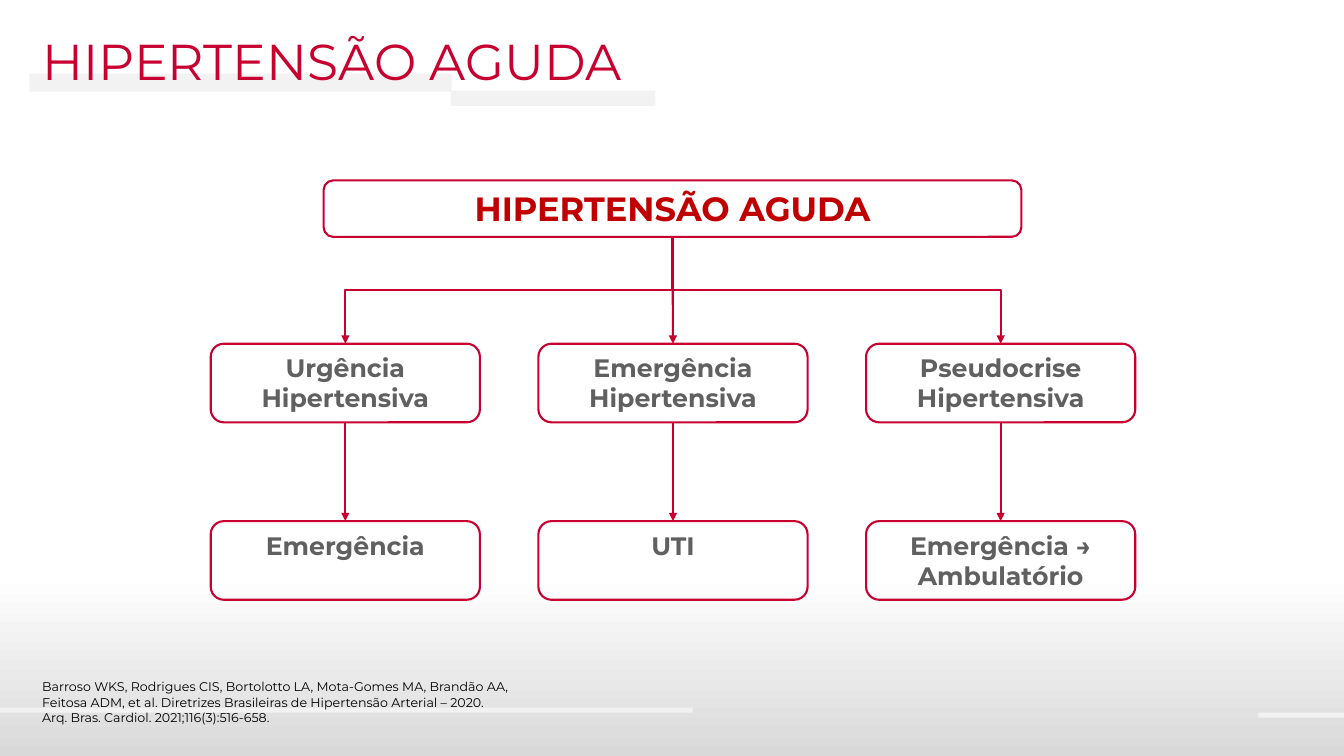
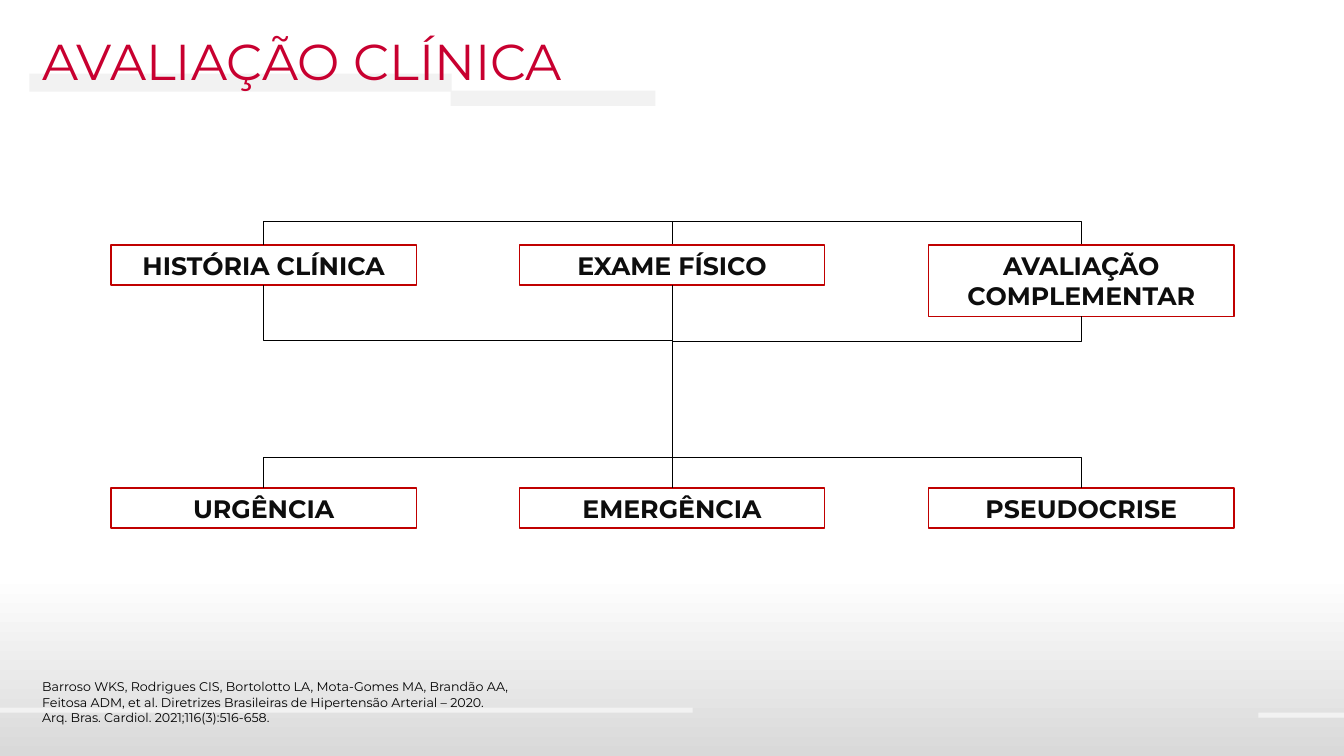
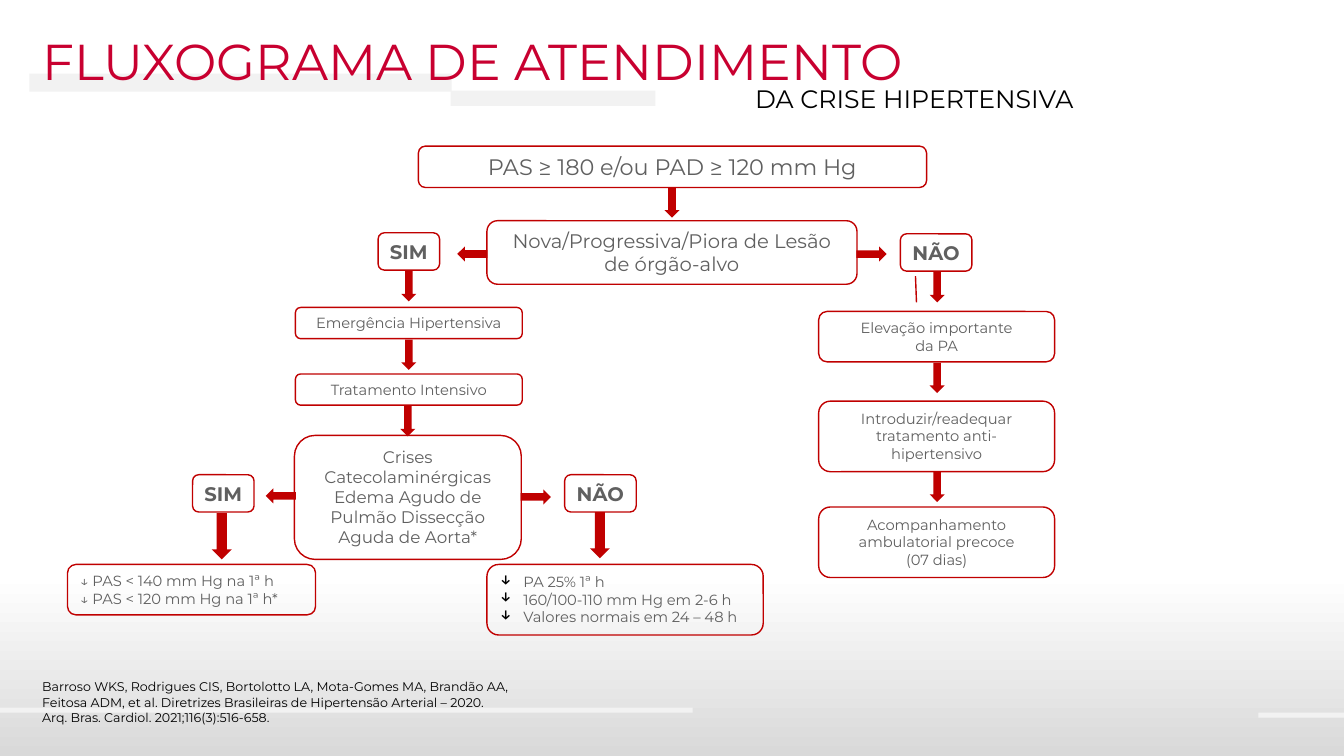
import lxml.etree
import pptx
import pptx.dml.color
import pptx.enum.shapes
import pptx.enum.text
import pptx.oxml.ns
import pptx.util

SHAPE = pptx.enum.shapes.MSO_SHAPE
CONNECTOR = pptx.enum.shapes.MSO_CONNECTOR
ALIGN = pptx.enum.text.PP_ALIGN
ANCHOR = pptx.enum.text.MSO_ANCHOR
qn = pptx.oxml.ns.qn

# Shared look
FONT = "Montserrat"
CRIMSON, RED = "C80030", "C00000"
GRAY, INK, BLACK = "606060", "0D0D0D", "000000"
BAND, WHITE, SHADE = "F2F2F2", "FFFFFF", "D9D9D9"
WIDTH, HEIGHT = 1333, 750
TOP, BOTTOM = 0, 2  # connection sites of a box
REFERENCE = (
    "Barroso WKS, Rodrigues CIS, Bortolotto LA, Mota-Gomes MA, Brandão AA,\n"
    "Feitosa ADM, et al. Diretrizes Brasileiras de Hipertensão Arterial – 2020.\n"
    "Arq. Bras. Cardiol. 2021;116(3):516-658."
)


def px(n):
    """100 px to the inch."""
    return pptx.util.Emu(round(n * 9144))


def rgb(color):
    return pptx.dml.color.RGBColor.from_string(color)


# Text
def add_bullet(p, char, indent, color):
    pPr = p._p.get_or_add_pPr()
    pPr.set("marL", str(px(indent)))
    pPr.set("indent", str(px(-indent)))
    bu_color = lxml.etree.SubElement(pPr, qn("a:buClr"))
    lxml.etree.SubElement(bu_color, qn("a:srgbClr"), val=color)
    lxml.etree.SubElement(pPr, qn("a:buChar"), char=char)


def write(tf, text, size=18, color=BLACK, bold=False, align=ALIGN.LEFT,
          anchor=ANCHOR.TOP, wrap=True, bullet=None):
    tf.word_wrap = wrap
    tf.auto_size = pptx.enum.text.MSO_AUTO_SIZE.NONE
    tf.vertical_anchor = anchor
    for i, line in enumerate(text.split("\n")):
        p = tf.add_paragraph() if i else tf.paragraphs[0]
        p.alignment = align
        if bullet:
            add_bullet(p, bullet, 23, BLACK)
        r = p.add_run()
        r.text = line
        r.font.name = FONT
        r.font.size = pptx.util.Pt(size)
        r.font.bold = bold
        r.font.color.rgb = rgb(color)


def add_text(s, x, y, w, h, text, **fmt):
    sp = s.shapes.add_textbox(px(x), px(y), px(w), px(h))
    write(sp.text_frame, text, **fmt)


# Shapes
def add_solid(s, kind, x, y, w, h, color, rotation=0):
    sp = s.shapes.add_shape(kind, px(x), px(y), px(w), px(h))
    sp.shadow.inherit = False
    sp.fill.solid()
    sp.fill.fore_color.rgb = rgb(color)
    sp.line.fill.background()
    sp.rotation = rotation
    return sp


def add_box(s, x, y, w, h, text, kind=SHAPE.ROUNDED_RECTANGLE, border=RED,
            weight=1, color=GRAY, align=ALIGN.CENTER, **fmt):
    sp = s.shapes.add_shape(kind, px(x), px(y), px(w), px(h))
    sp.shadow.inherit = False
    sp.fill.background()
    sp.line.color.rgb = rgb(border)
    sp.line.width = pptx.util.Pt(weight)
    write(sp.text_frame, text, color=color, align=align, **fmt)
    return sp


# Connectors
def style_line(c, color, weight, arrow=False):
    c.line.color.rgb = rgb(color)
    c.line.width = pptx.util.Pt(weight)
    spPr = c._element.spPr
    if arrow:
        lxml.etree.SubElement(spPr.find(qn("a:ln")), qn("a:tailEnd"), type="triangle")
    lxml.etree.SubElement(spPr, qn("a:effectLst"))


def add_line(s, x1, y1, x2, y2, color, weight):
    c = s.shapes.add_connector(CONNECTOR.STRAIGHT, px(x1), px(y1), px(x2), px(y2))
    style_line(c, color, weight)


def join(s, start, end, kind=CONNECTOR.STRAIGHT, sites=(BOTTOM, TOP), **look):
    c = s.shapes.add_connector(kind, 0, 0, 0, 0)
    c.begin_connect(start, sites[0])
    c.end_connect(end, sites[1])
    style_line(c, **look)
    return c


def join_elbow(s, start, end, turn, sites=(BOTTOM, TOP), **look):
    """Leave start vertically, cross at height turn, enter end vertically."""
    c = join(s, start, end, CONNECTOR.ELBOW, sites, **look)
    x1, x2 = (b.left + b.width // 2 for b in (start, end))
    y1, y2 = (b.top + (b.height if site == BOTTOM else 0)
              for b, site in zip((start, end), sites))
    up, leftward = px(turn) < y1, x2 < x1
    run, across = max(abs(y2 - y1), px(1)), abs(x2 - x1)
    mid_y = y1 - run // 2 if up else y1 + run // 2
    # The elbow runs sideways by nature, so it is turned about its centre
    c.left, c.top = (x1 + x2 - run) // 2, mid_y - across // 2
    c.width, c.height = run, across
    xfrm = c._element.spPr.xfrm
    xfrm.rot = 90 if up or leftward else 270
    xfrm.flipH, xfrm.flipV = not leftward, up
    bend = round(abs(px(turn) - y1) / run * 100000)
    guides = c._element.spPr.find(qn("a:prstGeom")).find(qn("a:avLst"))
    lxml.etree.SubElement(guides, qn("a:gd"), name="adj1", fmla=f"val {bend}")


# Frame of every slide
def build_layout(prs):
    """Reduce the title-only layout to its title."""
    layout = prs.slide_layouts[5]
    for ph in list(layout.placeholders):
        if ph.placeholder_format.idx:
            ph._element.getparent().remove(ph._element)
    return layout


def decorate(layout, s):
    """Draw the shared decoration on s and hand it over to the layout."""
    backdrop = add_solid(s, SHAPE.RECTANGLE, 0, 0, WIDTH, HEIGHT, WHITE)
    backdrop.fill.gradient()
    backdrop.fill.gradient_angle = 270
    for stop, position, color in zip(backdrop.fill.gradient_stops, (0.76, 1), (WHITE, SHADE)):
        stop.position = position
        stop.color.rgb = rgb(color)
    bands = [(29, 73, 419, 18), (447, 90, 203, 15), (0, 702, 687, 5), (1248, 707, 85, 5)]
    parts = [backdrop] + [add_solid(s, SHAPE.RECTANGLE, *band, BAND) for band in bands]
    for sp in parts:
        layout.shapes._spTree.append(sp._element)


def add_slide(prs, layout, title):
    s = prs.slides.add_slide(layout)
    sp = s.shapes.title
    sp.left, sp.top, sp.width, sp.height = px(32), px(25), px(1146), px(71)
    write(sp.text_frame, title, size=36, color=CRIMSON)
    add_text(s, 32, 669, 669, 56, REFERENCE, size=9)
    return s


# Slides
def fill_types(s):
    look = dict(border=CRIMSON, weight=1.5, bold=True)
    line = dict(color=CRIMSON, weight=1.5, arrow=True)
    head = add_box(s, 321, 179, 692, 56, "HIPERTENSÃO AGUDA", size=24, color=RED, **look)
    branches = [
        ("Urgência\nHipertensiva", "Emergência"),
        ("Emergência\nHipertensiva", "UTI"),
        ("Pseudocrise\nHipertensiva", "Emergência → Ambulatório"),
    ]
    for i, (crisis, place) in enumerate(branches):
        x = 209 + 325 * i
        upper = add_box(s, x, 341, 267, 78, crisis, **look)
        lower = add_box(s, x, 517, 267, 78, place, **look)
        join(s, upper, lower, **line)
        if i == 1:
            join(s, head, upper, **line)
        else:
            join_elbow(s, head, upper, 288, **line)


def fill_evaluation(s):
    def add_row(y, items):
        return [add_box(s, x, y, 303, h, text, kind=SHAPE.RECTANGLE, color=INK,
                        bold=True, anchor=ANCHOR.MIDDLE)
                for x, (text, h) in zip((110, 515, 921), items)]

    history, exam, tests = add_row(
        243, [("HISTÓRIA CLÍNICA", 40), ("EXAME FÍSICO", 40), ("AVALIAÇÃO COMPLEMENTAR", 71)])
    urgency, emergency, pseudo = add_row(
        484, [("URGÊNCIA", 40), ("EMERGÊNCIA", 40), ("PSEUDOCRISE", 40)])
    line = dict(color=BLACK, weight=0.5)
    for end in (tests, exam):
        join_elbow(s, history, end, 219, sites=(TOP, TOP), **line)
    for start, end in ((history, exam), (exam, tests)):
        join_elbow(s, start, end, 339, sites=(BOTTOM, BOTTOM), **line)
    for end in (urgency, pseudo):
        join_elbow(s, exam, end, 454, **line)
    join(s, exam, emergency, **line)


def fill_flowchart(s):
    add_text(s, 739, 78, 469, 40, "DA CRISE HIPERTENSIVA")

    # Steps
    steps = [
        (415, 145, 504, 41, 16, "PAS ≥ 180 e/ou PAD ≥ 120 mm Hg"),
        (483, 219, 367, 63, 14, "Nova/Progressiva/Piora de Lesão de órgão-alvo"),
        (293, 305, 225, 31, 10.5, "Emergência Hipertensiva"),
        (293, 371, 225, 31, 10.5, "Tratamento Intensivo"),
        (292, 432, 225, 123, 12,
         "Crises Catecolaminérgicas\nEdema Agudo de Pulmão Dissecção Aguda de Aorta*"),
        (812, 309, 234, 50, 10.5, "Elevação importante\nda PA"),
        (812, 398, 234, 70, 10.5, "Introduzir/readequar tratamento anti-hipertensivo"),
        (812, 503, 234, 70, 10.5, "Acompanhamento ambulatorial precoce\n(07 dias)"),
    ]
    for x, y, w, h, size, text in steps:
        add_box(s, x, y, w, h, text, size=size)

    # Answers
    for x, y, w, text in [(375, 231, 61, "SIM"), (893, 232, 71, "NÃO"),
                          (191, 471, 61, "SIM"), (560, 471, 71, "NÃO")]:
        add_box(s, x, y, w, 37, text, size=14, bold=True, wrap=False)

    # Targets
    add_box(s, 67, 560, 246, 50, "↓ PAS < 140 mm Hg na 1ª h\n↓ PAS < 120 mm Hg na 1ª h*",
            size=10.5, align=ALIGN.LEFT)
    add_box(s, 483, 560, 274, 70,
            "PA 25% 1ª h\n160/100-110 mm Hg em 2-6 h\nValores normais em 24 – 48 h",
            size=10.5, align=ALIGN.LEFT, bullet="↓")

    # Arrows
    add_line(s, 405, 298, 405, 274, RED, 1)
    add_line(s, 909, 300, 908, 274, RED, 1)
    small = [(659, 186, 0), (398, 269, 0), (398, 337, 0), (397, 403, 0),
             (922, 270, 0), (922, 360, 0), (922, 468, 0),
             (461, 237, 90), (857, 237, 270), (271, 477, 90), (524, 478, 270)]
    for x, y, rotation in small:
        add_solid(s, SHAPE.DOWN_ARROW, x, y, 15, 30, RED, rotation)
    for x, y in [(210, 509), (585, 508)]:
        add_solid(s, SHAPE.DOWN_ARROW, x, y, 20, 46, RED)


def main():
    prs = pptx.Presentation()
    prs.slide_width, prs.slide_height = px(WIDTH), px(HEIGHT)
    layout = build_layout(prs)
    slides = [
        ("HIPERTENSÃO AGUDA", fill_types),
        ("AVALIAÇÃO CLÍNICA", fill_evaluation),
        ("FLUXOGRAMA DE ATENDIMENTO", fill_flowchart),
    ]
    for i, (title, fill) in enumerate(slides):
        s = add_slide(prs, layout, title)
        if i == 0:
            decorate(layout, s)
        fill(s)
    prs.save("out.pptx")


if __name__ == "__main__":
    main()
